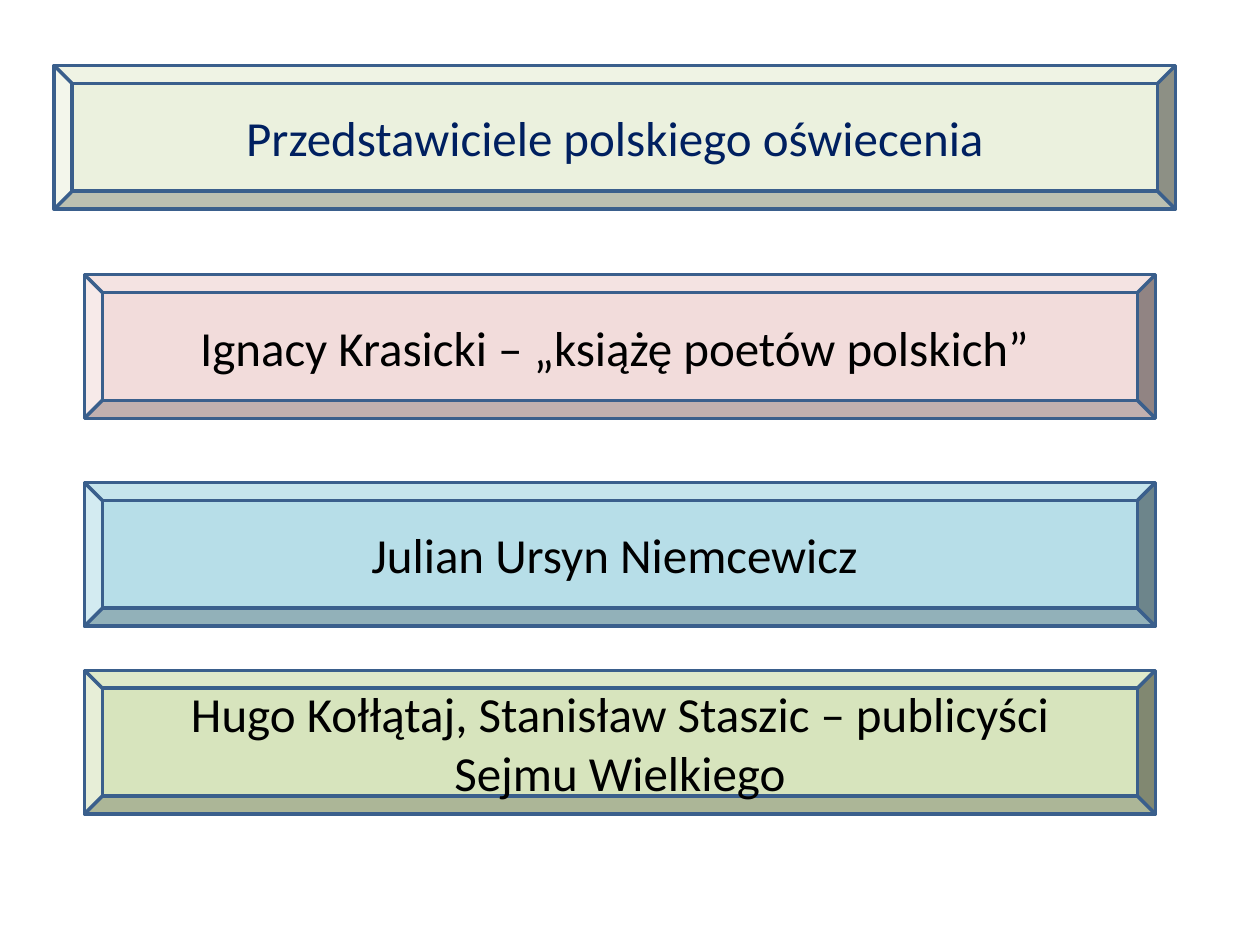
from pptx import Presentation
from pptx.dml.color import RGBColor
from pptx.enum import shapes, text
from pptx.util import Inches, Pt

NAVY = RGBColor(0x00, 0x20, 0x60)
BLACK = RGBColor(0x00, 0x00, 0x00)
OUTLINE = RGBColor(0x3A, 0x5F, 0x8C)
PALE_GREEN = RGBColor(0xEB, 0xF1, 0xDE)
PINK = RGBColor(0xF2, 0xDC, 0xDB)
AQUA = RGBColor(0xB7, 0xDE, 0xE8)
GREEN = RGBColor(0xD7, 0xE4, 0xBD)

PLAQUE_HEIGHT = 1.14
WRITERS = [
    (2.18, PINK, "Ignacy Krasicki – „książę poetów polskich” "),
    (3.83, AQUA, "Julian Ursyn Niemcewicz "),
    (5.32, GREEN, " Hugo Kołłątaj, Stanisław Staszic – publicyści \vSejmu Wielkiego"),
]


def add_plaque(page, left, top, width, fill, wording, color=BLACK):
    plaque = page.shapes.add_shape(
        shapes.MSO_SHAPE.BEVEL,
        Inches(left), Inches(top), Inches(width), Inches(PLAQUE_HEIGHT),
    )
    plaque.shadow.inherit = False
    plaque.fill.solid()
    plaque.fill.fore_color.rgb = fill
    plaque.line.color.rgb = OUTLINE
    plaque.line.width = Pt(2)
    frame = plaque.text_frame
    frame.word_wrap = True
    frame.vertical_anchor = text.MSO_ANCHOR.MIDDLE
    para = frame.paragraphs[0]
    para.text = wording
    para.alignment = text.PP_ALIGN.CENTER
    para.font.name = "Calibri"
    para.font.size = Pt(28)
    para.font.color.rgb = color


def main():
    deck = Presentation()
    deck.slide_width = Inches(10)
    deck.slide_height = Inches(7.5)
    page = deck.slides.add_slide(deck.slide_layouts[6])
    add_plaque(page, 0.43, 0.52, 8.9, PALE_GREEN,
               "Przedstawiciele polskiego oświecenia", NAVY)
    for top, fill, wording in WRITERS:
        add_plaque(page, 0.67, top, 8.5, fill, wording)
    deck.save("out.pptx")


if __name__ == "__main__":
    main()
